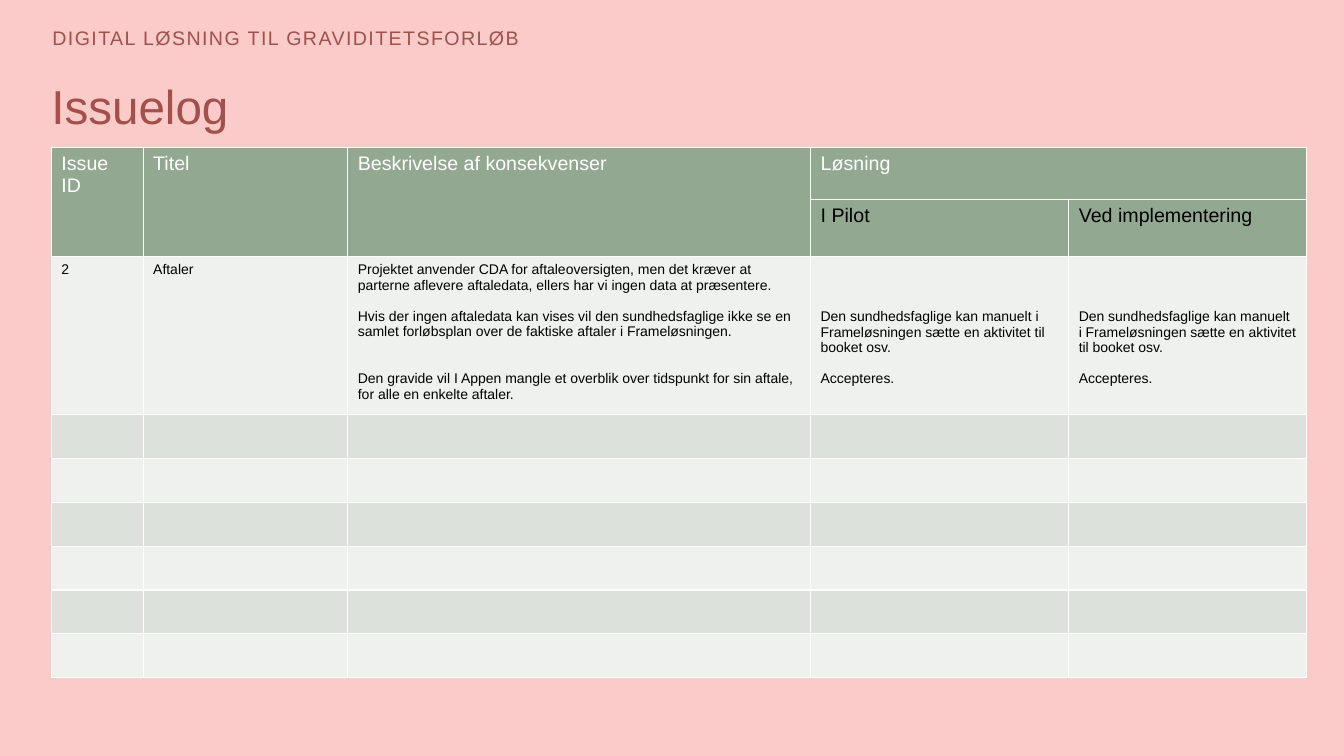
from pptx import Presentation
from pptx.dml.color import RGBColor
from pptx.enum.text import MSO_ANCHOR
from pptx.oxml import parse_xml
from pptx.oxml.ns import nsdecls
from pptx.util import Inches, Pt

PINK = RGBColor(0xFB, 0xCB, 0xCA)
RED = RGBColor(0xA2, 0x50, 0x4C)
GREEN = RGBColor(0x93, 0xA8, 0x90)
LIGHT = RGBColor(0xEE, 0xF1, 0xEE)
DARK = RGBColor(0xDC, 0xE1, 0xDB)
WHITE = RGBColor(0xFF, 0xFF, 0xFF)
BLACK = RGBColor(0, 0, 0)
LINE = 11.2  # height of one 10 pt line


def style(para, size, color):
    para.font.name = "Arial"
    para.font.size = Pt(size)
    para.font.bold = False
    para.font.color.rgb = color


def add_text(left, top, width, height, text, size, anchor):
    box = slide.shapes.add_textbox(Inches(left), Inches(top), Inches(width), Inches(height))
    frame = box.text_frame
    frame.margin_left = frame.margin_right = frame.margin_top = frame.margin_bottom = 0
    frame.vertical_anchor = anchor
    para = frame.paragraphs[0]
    para.text = text
    style(para, size, RED)
    return frame


prs = Presentation()
prs.slide_width, prs.slide_height = Inches(13.33), Inches(7.5)
slide = prs.slides.add_slide(prs.slide_layouts[6])
slide.background.fill.solid()
slide.background.fill.fore_color.rgb = PINK

# Headings
label = add_text(0.52, 0, 5.98, 0.49, "DIGITAL LØSNING TIL GRAVIDITETSFORLØB", 14, MSO_ANCHOR.BOTTOM)
label.word_wrap = False
label.paragraphs[0].runs[0].font._element.set("spc", "100")
title = add_text(0.51, 0.83, 6.01, 1.06, "Issuelog", 34, MSO_ANCHOR.TOP)
title.word_wrap = True
title.paragraphs[0].line_spacing = 0.9

# Table grid
widths = [0.91, 2.03, 4.59, 2.56, 2.36]
heights = [0.52, 0.53, 1.5] + [0.435] * 6
table = slide.shapes.add_table(
    len(heights), len(widths), Inches(0.51), Inches(1.46),
    Inches(sum(widths)), Inches(sum(heights))).table
for col, width in zip(table.columns, widths):
    col.width = Inches(width)
for row, height in zip(table.rows, heights):
    row.height = Inches(height)

# Borders and fills
for r, row in enumerate(table.rows):
    for cell in row.cells:
        props = cell._tc.get_or_add_tcPr()
        for side in "LRTB":
            props.append(parse_xml(
                f'<a:ln{side} {nsdecls("a")} w="12700"><a:solidFill>'
                f'<a:srgbClr val="{WHITE}"/></a:solidFill></a:ln{side}>'))
        cell.fill.solid()
        cell.fill.fore_color.rgb = GREEN if r < 2 else (LIGHT, DARK)[r % 2]
        style(cell.text_frame.paragraphs[0], 10, BLACK)

# Header
for c in range(3):
    table.cell(0, c).merge(table.cell(1, c))
table.cell(0, 3).merge(table.cell(0, 4))
heads = [
    (0, 0, "Issue ID", WHITE),
    (0, 1, "Titel", WHITE),
    (0, 2, "Beskrivelse af konsekvenser", WHITE),
    (0, 3, "Løsning", WHITE),
    (1, 3, "I Pilot", BLACK),
    (1, 4, "Ved implementering", BLACK),
]
for r, c, text, color in heads:
    para = table.cell(r, c).text_frame.paragraphs[0]
    para.text = text
    style(para, 14, color)

# Issue row: each text with the number of free lines above it
remedy = [
    ("Den sundhedsfaglige kan manuelt i Frameløsningen sætte en aktivitet til booket osv.", 0),
    ("Accepteres.", 1),
]
issue = [
    [("2", 0)],
    [("Aftaler", 0)],
    [
        ("Projektet anvender CDA for aftaleoversigten, men det kræver at parterne aflevere "
         "aftaledata, ellers har vi ingen data at præsentere.", 0),
        ("Hvis der ingen aftaledata kan vises vil den sundhedsfaglige ikke se en samlet "
         "forløbsplan over de faktiske aftaler i Frameløsningen.", 1),
        ("Den gravide vil I Appen mangle et overblik over tidspunkt for sin aftale, "
         "for alle en enkelte aftaler.", 2),
    ],
    remedy,
    remedy,
]
for c, texts in enumerate(issue):
    cell = table.cell(2, c)
    if texts is remedy:
        cell.margin_top = Inches(0.05) + Pt(3 * LINE)
    frame = cell.text_frame
    for i, (text, gap) in enumerate(texts):
        para = frame.add_paragraph() if i else frame.paragraphs[0]
        para.text = text
        para.space_before = Pt(gap * LINE)
        style(para, 10, BLACK)

prs.save("out.pptx")
